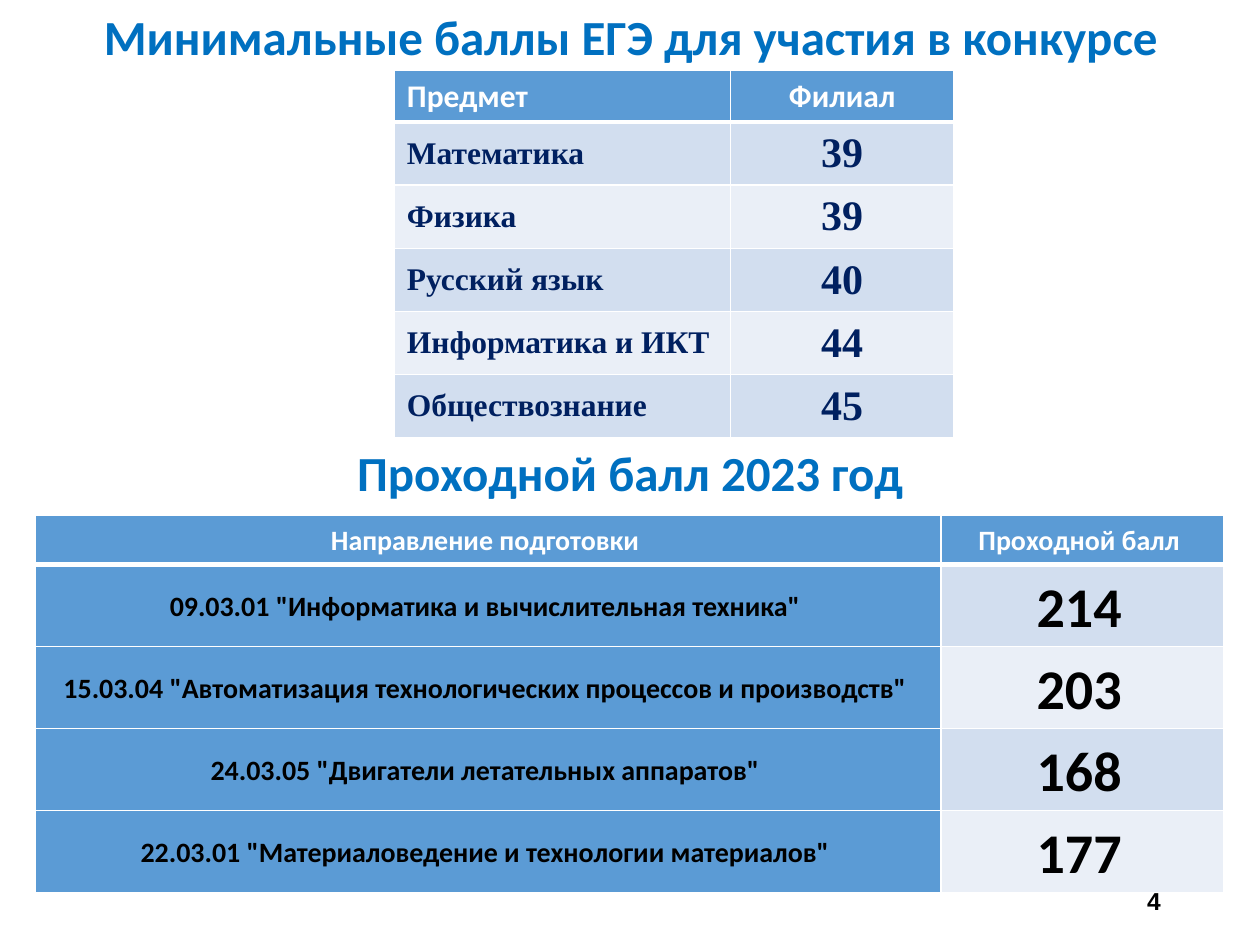
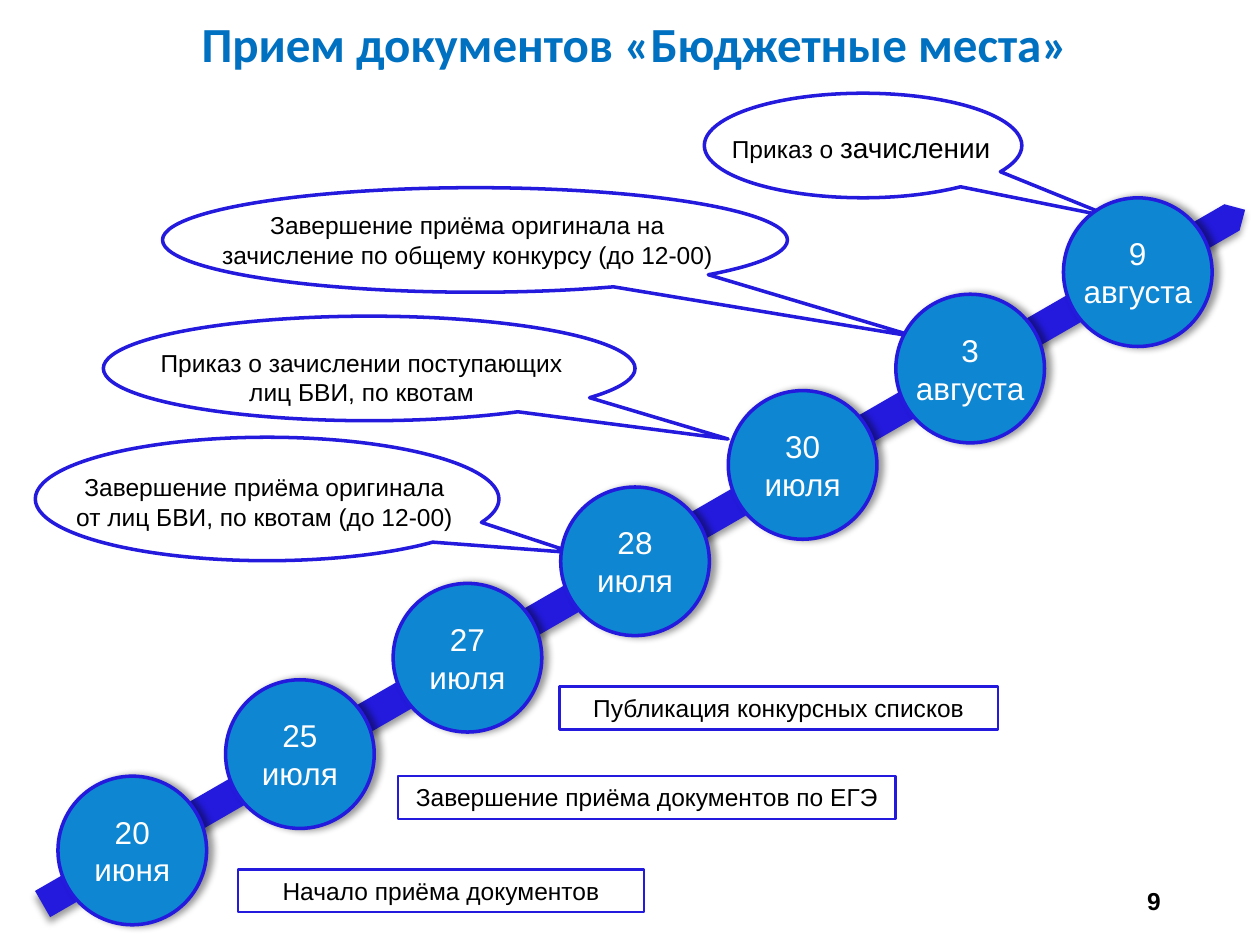
from pptx import Presentation
from pptx.dml.color import RGBColor
from pptx.enum.shapes import MSO_SHAPE
from pptx.enum.text import MSO_ANCHOR, PP_ALIGN
from pptx.oxml import parse_xml
from pptx.oxml.ns import nsdecls, qn
from pptx.util import Inches, Pt

# Shared colours
TITLE_BLUE = RGBColor(0x00, 0x70, 0xC0)
HEADER_BLUE = RGBColor(0x5B, 0x9B, 0xD5)
BANDS = (RGBColor(0xD2, 0xDE, 0xEF), RGBColor(0xEA, 0xEF, 0xF7))
NAVY = RGBColor(0x00, 0x20, 0x60)
OUTLINE = RGBColor(0x23, 0x1A, 0xDD)
CIRCLE_BLUE = RGBColor(0x0E, 0x86, 0xD2)
WHITE = RGBColor(0xFF, 0xFF, 0xFF)
BLACK = RGBColor(0x00, 0x00, 0x00)

# Shared text formats
TITLE = {"name": "Calibri", "size": Pt(28), "bold": True, "color": TITLE_BLUE}
PAGE = {"name": "Arial", "size": Pt(14), "bold": True, "color": BLACK}
NOTE = {"name": "Arial", "size": Pt(14), "color": BLACK}
DATE = {"name": "Arial", "size": Pt(18), "color": WHITE}
HEADER = {"name": "Calibri", "size": Pt(18), "bold": True, "color": WHITE}
SUBJECT = {"name": "Times New Roman", "size": Pt(18), "bold": True, "color": NAVY}
PROGRAMME = {"name": "Calibri", "size": Pt(16), "bold": True, "color": BLACK}

# Content of slide 1
SUBJECTS = {
    "at": (3.13, 0.56), "columns": (2.67, 1.77), "rows": (0.41, 0.5),
    "head": ("Предмет", "Филиал"), "head_format": HEADER,
    "body": [("Математика", "39"), ("Физика", "39"), ("Русский язык", "40"),
             ("Информатика и ИКТ", "44"), ("Обществознание", "45")],
    "formats": (SUBJECT, SUBJECT | {"size": Pt(24)}),
    "aligns": (PP_ALIGN.LEFT, PP_ALIGN.CENTER),
    "first_fill": None, "spacing": None, "insets": (0.1, 0.05, 0.1, 0.05),
}
PASSING = {
    "at": (0.28, 4.09), "columns": (7.19, 2.24), "rows": (0.39, 0.65),
    "head": ("Направление подготовки", "Проходной балл"),
    "head_format": HEADER | {"size": Pt(16)},
    "body": [('09.03.01 "Информатика и вычислительная техника"', "214"),
             ('15.03.04 "Автоматизация технологических процессов и производств"', "203"),
             ('24.03.05 "Двигатели летательных аппаратов"', "168"),
             ('22.03.01 "Материаловедение и технологии материалов"', "177")],
    "formats": (PROGRAMME, PROGRAMME | {"size": Pt(32)}),
    "aligns": (PP_ALIGN.CENTER, PP_ALIGN.CENTER),
    "first_fill": HEADER_BLUE, "spacing": 1.07, "insets": (0.05, 0.04, 0.1, 0.04),
}

# Content of slide 2
DATES = [("20", "июня"), ("25", "июля"), ("27", "июля"), ("28", "июля"),
         ("30", "июля"), ("3", "августа"), ("9", "августа")]
FIRST_CIRCLE, CIRCLE_STEP, CIRCLE_SIZE = (0.46, 6.16), (1.33, -0.765), 1.18
STAGES = [("Начало приёма документов", (1.89, 6.9, 3.22, 0.34)),
          ("Завершение приёма документов по ЕГЭ", (3.16, 6.16, 3.95, 0.34)),
          ("Публикация конкурсных списков", (4.44, 5.45, 3.48, 0.34))]
# Runs of text, text area, bubble, pointer
CALLOUTS = [
    ([("Приказ о ", 14), ("зачислении", 16)],
     (5.57, 0.99, 2.53, 0.37), (5.59, 0.74, 2.52, 0.83), (0.787, 0.688)),
    ([("Завершение приёма оригинала на зачисление по общему конкурсу (до 12-00)", 14)],
     (1.52, 1.62, 4.38, 0.57), (1.29, 1.49, 4.96, 0.83), (0.707, 0.928)),
    ([("Приказ о зачислении поступающих лиц БВИ, по квотам", 14)],
     (1.01, 2.71, 3.72, 0.57), (0.82, 2.51, 4.22, 0.83), (0.675, 0.675)),
    ([("Завершение приёма оригинала от лиц БВИ, по квотам (до 12-00)", 14)],
     (0.48, 3.7, 3.24, 0.48), (0.28, 3.47, 3.68, 0.98), (0.66, 0.435)),
]


def add_run(paragraph, text, style):
    run = paragraph.add_run()
    run.text = text
    for key, value in style.items():
        if key == "color":
            run.font.color.rgb = value
        else:
            setattr(run.font, key, value)


def write(frame, lines, style, align=PP_ALIGN.CENTER, anchor=MSO_ANCHOR.TOP,
          wrap=True, spacing=None):
    """Fill a text frame; each line is a string or a list of (text, size) runs."""
    frame.word_wrap = wrap
    frame.vertical_anchor = anchor
    for i, line in enumerate(lines):
        paragraph = frame.add_paragraph() if i else frame.paragraphs[0]
        paragraph.alignment, paragraph.line_spacing = align, spacing
        runs = [(line, None)] if isinstance(line, str) else line
        for text, size in runs:
            add_run(paragraph, text, style | ({"size": Pt(size)} if size else {}))


def add_text(slide, box, lines, style, **layout):
    area = slide.shapes.add_textbox(*map(Inches, box))
    write(area.text_frame, lines, style, **layout)


def add_figure(slide, kind, box, fill=None, line_width=None, shadow_angle=None):
    figure = slide.shapes.add_shape(kind, *map(Inches, box))
    figure.shadow.inherit = False
    if fill is None:
        figure.fill.background()
    else:
        figure.fill.solid()
        figure.fill.fore_color.rgb = fill
    if line_width is None:
        figure.line.fill.background()
    else:
        figure.line.color.rgb = OUTLINE
        figure.line.width = Pt(line_width)
    if shadow_angle is not None:
        effects = figure.element.spPr.find(qn("a:effectLst"))
        effects.append(parse_xml(
            f'<a:outerShdw {nsdecls("a")} blurRad="{Pt(4)}" dist="{Pt(3)}" '
            f'dir="{shadow_angle * 60000}" rotWithShape="0"><a:srgbClr val="000000">'
            '<a:alpha val="40000"/></a:srgbClr></a:outerShdw>'))
    return figure


def add_borders(cell, bottom_width):
    widths = {"lnL": 1, "lnR": 1, "lnT": 1, "lnB": bottom_width}
    for i, (side, width) in enumerate(widths.items()):
        cell._tc.get_or_add_tcPr().insert(i, parse_xml(
            f'<a:{side} {nsdecls("a")} w="{Pt(width)}"><a:solidFill>'
            f'<a:srgbClr val="{WHITE}"/></a:solidFill></a:{side}>'))


def add_score_table(slide, data):
    rows = [data["head"], *data["body"]]
    head_height, body_height = data["rows"]
    heights = [head_height] + [body_height] * len(data["body"])
    table = slide.shapes.add_table(
        len(rows), len(data["columns"]), *map(Inches, data["at"]),
        Inches(sum(data["columns"])), Inches(sum(heights))).table
    table.first_row = table.horz_banding = False
    for column, width in zip(table.columns, data["columns"]):
        column.width = Inches(width)
    for r, (values, height) in enumerate(zip(rows, heights)):
        table.rows[r].height = Inches(height)
        for c, value in enumerate(values):
            cell = table.cell(r, c)
            fill = HEADER_BLUE if r == 0 else BANDS[(r - 1) % 2]
            if c == 0 and data["first_fill"]:
                fill = data["first_fill"]
            cell.fill.solid()
            cell.fill.fore_color.rgb = fill
            add_borders(cell, 1 if r else 3)
            write(cell.text_frame, [value], data["formats"][c] if r else data["head_format"],
                  align=data["aligns"][c], spacing=data["spacing"])
            cell.vertical_anchor = MSO_ANCHOR.MIDDLE
            for side, inset in zip(("left", "top", "right", "bottom"), data["insets"]):
                setattr(cell, f"margin_{side}", Inches(inset))


def add_page_number(slide, number):
    add_text(slide, (7.06, 6.95, 2.25, 0.4), [number], PAGE,
             align=PP_ALIGN.RIGHT, anchor=MSO_ANCHOR.MIDDLE)


def build_scores(slide):
    add_text(slide, (0.34, 0, 9.33, 0.57),
             ["Минимальные баллы ЕГЭ для участия в конкурсе"], TITLE)
    add_text(slide, (1.13, 3.46, 7.74, 0.57), ["Проходной балл 2023 год"], TITLE)
    for data in (PASSING, SUBJECTS):
        add_score_table(slide, data)
    add_page_number(slide, "4")


def build_timeline(slide):
    add_text(slide, (1.48, 0.06, 7.11, 0.57),
             ["Прием документов «Бюджетные места»"], TITLE, wrap=False)

    # Stage labels and callouts
    for label, box in STAGES:
        stage = add_figure(slide, MSO_SHAPE.RECTANGLE, box, line_width=1.5)
        write(stage.text_frame, [label], NOTE)
    for runs, text_box, bubble_box, pointer in CALLOUTS:
        bubble = add_figure(slide, MSO_SHAPE.OVAL_CALLOUT, bubble_box, line_width=2)
        for i, offset in enumerate(pointer):
            bubble.adjustments[i] = offset
        add_text(slide, text_box, [runs], NOTE)

    # Rising arrow with a circle for each date
    arrow = add_figure(slide, MSO_SHAPE.PENTAGON, (-0.4, 4.3, 11.02, 0.24),
                       fill=OUTLINE, shadow_angle=90)
    arrow.rotation = 330
    for i, date in enumerate(DATES):
        left, top = (start + i * step for start, step in zip(FIRST_CIRCLE, CIRCLE_STEP))
        circle = add_figure(slide, MSO_SHAPE.OVAL, (left, top, CIRCLE_SIZE, CIRCLE_SIZE),
                            fill=CIRCLE_BLUE, line_width=2, shadow_angle=0)
        write(circle.text_frame, date, DATE, anchor=MSO_ANCHOR.MIDDLE, wrap=False)
    add_page_number(slide, "9")


def main():
    deck = Presentation()
    deck.slide_width, deck.slide_height = Inches(10), Inches(7.5)
    for build in (build_scores, build_timeline):
        build(deck.slides.add_slide(deck.slide_layouts[6]))
    deck.save("out.pptx")


if __name__ == "__main__":
    main()
